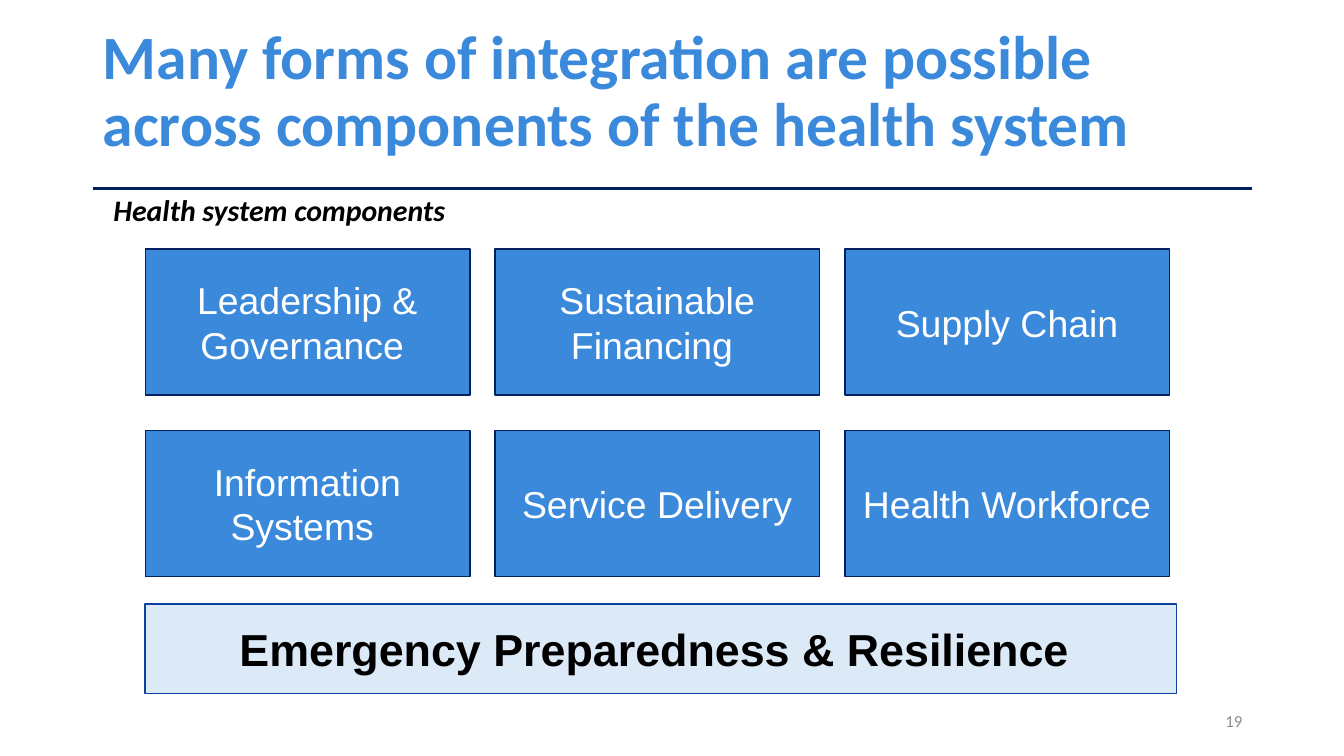
"""Build a slide on the components of a health system."""
import pptx
import pptx.util
import pptx.dml.color
import pptx.enum.shapes
import pptx.enum.text
import pptx.oxml
from dataclasses import dataclass

Inches = pptx.util.Inches
Align = pptx.enum.text.PP_ALIGN


@dataclass
class Theme:
    blue: str = "3A89DB"
    navy: str = "002060"
    pale: str = "DCEAF8"
    edge: str = "0C419E"
    white: str = "FFFFFF"
    black: str = "000000"
    grey: str = "8C8C8C"
    head: str = "Calibri"
    body: str = "Arial"
    title: float = 44
    band: float = 32
    card: float = 26.7
    label: float = 21.3
    small: float = 12


def color(code):
    return pptx.dml.color.RGBColor.from_string(code)


def write(shape, text, size, ink, face, align=Align.CENTER, bold=False,
          slant=False, space=None, fill=None, line=None):
    frame = shape.text_frame
    frame.word_wrap = True
    frame.auto_size = pptx.enum.text.MSO_AUTO_SIZE.NONE
    frame.vertical_anchor = pptx.enum.text.MSO_ANCHOR.MIDDLE
    para = frame.paragraphs[0]
    para.alignment, para.line_spacing = align, space
    run = para.add_run()
    run.text = text
    font = run.font
    font.size, font.name = pptx.util.Pt(size), face
    font.bold, font.italic = bold, slant
    font.color.rgb = color(ink)
    if fill:
        shape.shadow.inherit = False
        shape.fill.solid()
        shape.fill.fore_color.rgb = color(fill)
        shape.line.color.rgb = color(line)
        shape.line.width = pptx.util.Pt(1)


theme = Theme()
deck = pptx.Presentation()
deck.slide_width, deck.slide_height = Inches(13.33), Inches(7.5)
slide = deck.slides.add_slide(deck.slide_layouts[5])
shapes = slide.shapes
rect = pptx.enum.shapes.MSO_SHAPE.RECTANGLE
edge, wide = Inches(0.92), Inches(11.5)

title = shapes.title
title.left, title.top, title.width, title.height = edge, 0, wide, Inches(1.85)
write(title, "Many forms of integration are possible across components of the health system",
      theme.title, theme.blue, theme.head, align=Align.LEFT, bold=True, space=0.9)

level = Inches(1.87)
rule = shapes.add_connector(pptx.enum.shapes.MSO_CONNECTOR.STRAIGHT,
                            edge, level, edge + wide, level)
rule.line.color.rgb = color(theme.navy)
rule.line.width = pptx.util.Pt(2.25)
props = rule._element.spPr
props.append(props.makeelement(pptx.oxml.ns.qn("a:effectLst"), {}))

left, top = Inches(1.44), Inches(2.47)
across, down = Inches(3.47), Inches(1.8)
grid = [
    ["Leadership & Governance ", "Sustainable Financing ", "Supply Chain"],
    ["Information Systems ", "Service Delivery", "Health Workforce"],
]
for row, names in enumerate(grid):
    for col, name in enumerate(names):
        card = shapes.add_shape(rect, left + col * across, top + row * down,
                                Inches(3.22), Inches(1.45))
        write(card, name, theme.card, theme.white, theme.body,
              fill=theme.blue, line=theme.navy)

band = shapes.add_shape(rect, left, Inches(5.99), Inches(10.23), Inches(0.89))
write(band, "Emergency Preparedness & Resilience ", theme.band, theme.black,
      theme.body, bold=True, fill=theme.pale, line=theme.edge)

label = shapes.add_textbox(edge, Inches(1.71), Inches(3.7), Inches(0.74))
write(label, "Health system components", theme.label, theme.black, theme.head,
      bold=True, slant=True)

number = shapes.add_textbox(Inches(9.42), Inches(6.95), Inches(3), Inches(0.4))
write(number, "19", theme.small, theme.grey, theme.head, align=Align.RIGHT)

deck.save("out.pptx")
